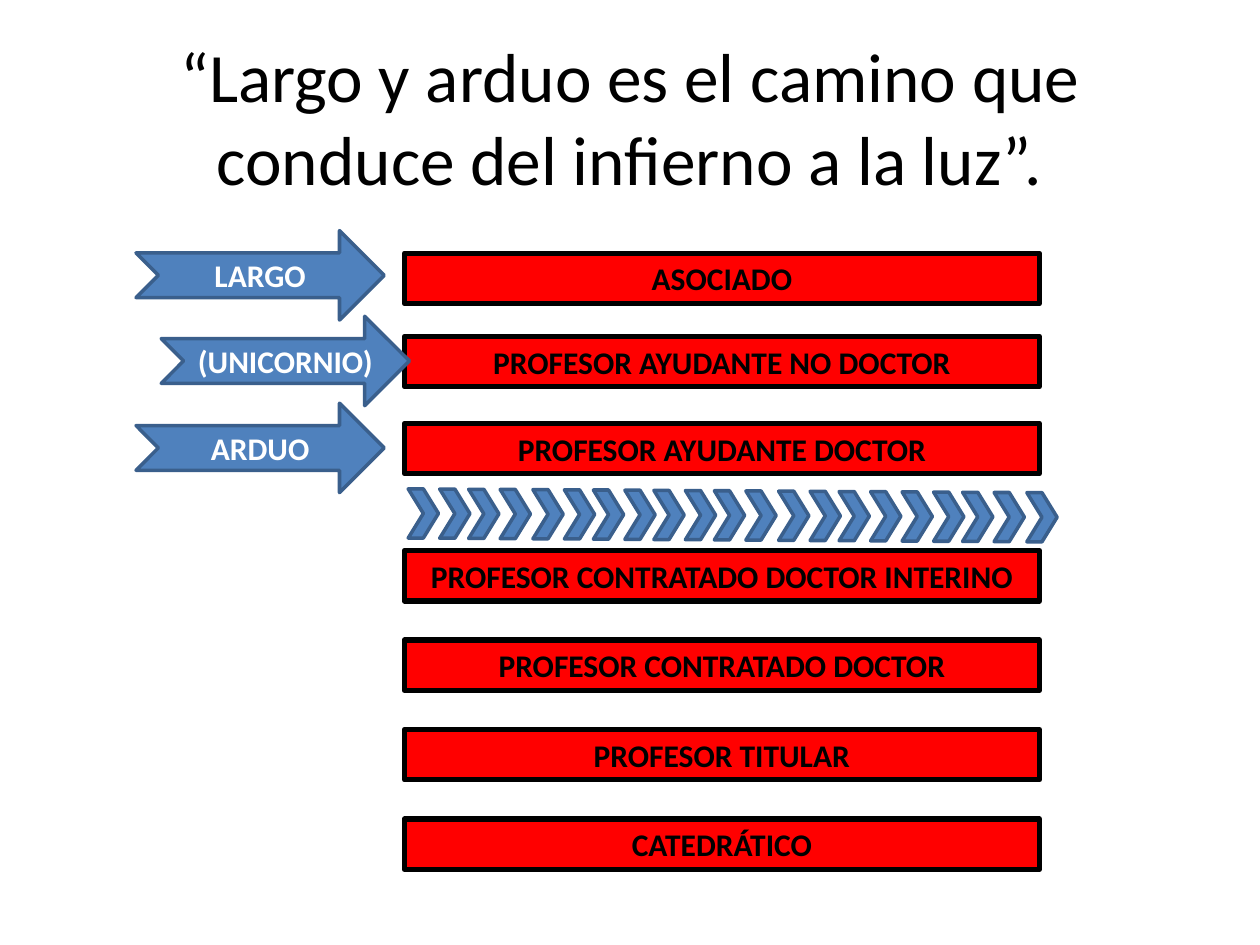
"""Builds a slide showing the academic career ladder."""
from pptx import Presentation
from pptx.dml.color import RGBColor
from pptx.enum.shapes import MSO_SHAPE
from pptx.enum.text import MSO_ANCHOR, MSO_AUTO_SIZE, PP_ALIGN
from pptx.util import Inches, Pt

COLORS = {"black": "000000", "white": "FFFFFF", "red": "FF0000",
          "blue": "4F81BD", "navy": "3A5F8C"}


def write(frame, text, size=18, color="black", bold=True):
    frame.word_wrap = True
    frame.vertical_anchor = MSO_ANCHOR.MIDDLE
    line = frame.paragraphs[0]
    line.alignment = PP_ALIGN.CENTER
    run = line.add_run()
    run.text = text
    run.font.name = "Calibri"
    run.font.size = Pt(size)
    run.font.bold = bold
    run.font.color.rgb = RGBColor.from_string(COLORS[color])


def draw(kind, left, top, width, height, fill="blue", edge="navy", weight=2):
    shape = slide.shapes.add_shape(
        kind, Inches(left), Inches(top), Inches(width), Inches(height))
    shape.shadow.inherit = False
    shape.fill.solid()
    shape.fill.fore_color.rgb = RGBColor.from_string(COLORS[fill])
    shape.line.color.rgb = RGBColor.from_string(COLORS[edge])
    shape.line.width = Pt(weight)
    return shape


deck = Presentation()
deck.slide_width, deck.slide_height = Inches(10), Inches(7.5)
slide = deck.slides.add_slide(deck.slide_layouts[5])

title = slide.shapes.title
title.left, title.top = Inches(0.5), Inches(0.3)
title.width, title.height = Inches(9), Inches(1.25)
write(title.text_frame,
      "“Largo y arduo es el camino que conduce del infierno a la luz”.",
      size=39.6, bold=False)
title.text_frame.auto_size = MSO_AUTO_SIZE.NONE

ranks = [
    ("ASOCIADO", 2.01),
    ("PROFESOR AYUDANTE NO DOCTOR", 2.67),
    ("PROFESOR AYUDANTE DOCTOR", 3.36),
    ("PROFESOR CONTRATADO DOCTOR INTERINO", 4.37),
    ("PROFESOR CONTRATADO DOCTOR", 5.08),
    ("PROFESOR TITULAR", 5.79),
    ("CATEDRÁTICO", 6.5),
]
for text, top in ranks:
    box = draw(MSO_SHAPE.RECTANGLE, 3.21, top, 5.04, 0.4, "red", "black", 3)
    write(box.text_frame, text)
    box.text_frame.auto_size = MSO_AUTO_SIZE.SHAPE_TO_FIT_TEXT

lefts = [3.24, 3.49, 3.72, 3.97, 4.23, 4.48, 4.71, 4.96, 5.19, 5.44, 5.67,
         5.92, 6.18, 6.43, 6.66, 6.91, 7.16, 7.41, 7.64, 7.89, 8.15]
drop = 0.03 / (len(lefts) - 1)
for step, left in enumerate(lefts):
    draw(MSO_SHAPE.CHEVRON, left, 3.88 + step * drop, 0.24, 0.39)

arrows = [("LARGO", 1.08, 1.83), ("ARDUO", 1.08, 3.2),
          ("(UNICORNIO)", 1.28, 2.51)]
for text, left, top in arrows:
    arrow = draw(MSO_SHAPE.NOTCHED_RIGHT_ARROW, left, top, 1.97, 0.71)
    write(arrow.text_frame, text, color="white")

deck.save("out.pptx")
